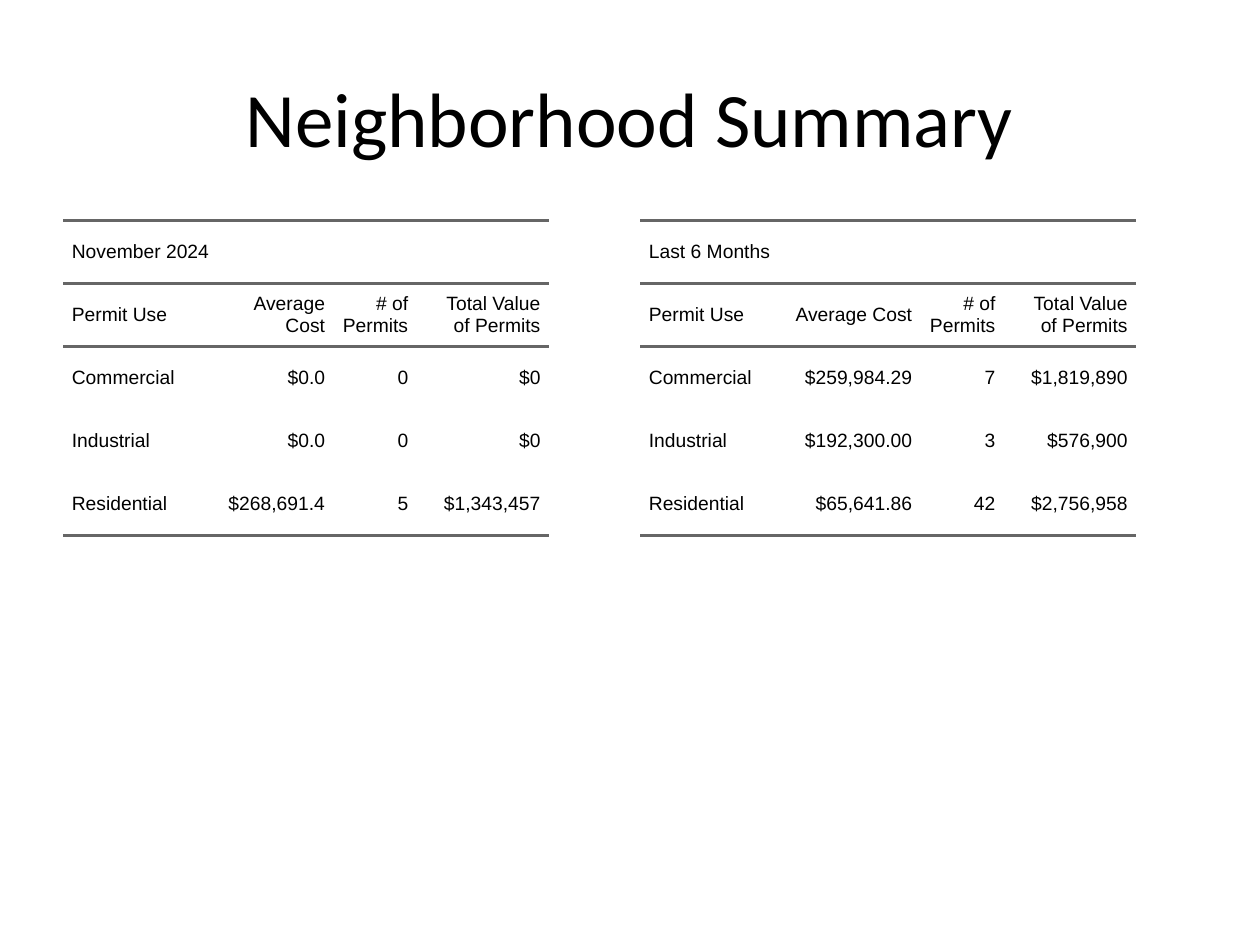
"""Build the neighborhood summary slide with two permit tables."""
import pptx
import pptx.dml.color
import pptx.enum.text
import pptx.oxml
import pptx.oxml.ns
import pptx.util
from pptx.util import Inches

TITLE = "Neighborhood Summary"
HEADINGS = ("Permit Use", "Average Cost", "# of Permits", "Total Value of Permits")
TABLES = [
    {
        "period": "November 2024",
        "left": 0.5,
        "widths": (1.1, 1.05, 0.66, 1.05),
        "permits": [
            ("Commercial", "$0.0", "0", "$0"),
            ("Industrial", "$0.0", "0", "$0"),
            ("Residential", "$268,691.4", "5", "$1,343,457"),
        ],
    },
    {
        "period": "Last 6 Months",
        "left": 5.08,
        "widths": (1.1, 1.13, 0.66, 1.05),
        "permits": [
            ("Commercial", "$259,984.29", "7", "$1,819,890"),
            ("Industrial", "$192,300.00", "3", "$576,900"),
            ("Residential", "$65,641.86", "42", "$2,756,958"),
        ],
    },
]
TABLE_TOP, ROW_HEIGHT, PADDING = 1.75, 0.5, 0.07
INK, RULE = "000000", "666666"
RULE_WIDTH = 1.5
ALIGN = pptx.enum.text.PP_ALIGN
MIDDLE = pptx.enum.text.MSO_ANCHOR.MIDDLE


def color(value):
    return pptx.dml.color.RGBColor.from_string(value)


def style_text(paragraph, font, size, align):
    paragraph.alignment = align
    paragraph.font.name = font
    paragraph.font.size = pptx.util.Pt(size)
    paragraph.font.color.rgb = color(INK)


def set_borders(cell, ruled):
    properties = cell._tc.get_or_add_tcPr()
    for index, side in enumerate(("L", "R", "T", "B")):
        if side in ruled:
            paint = f'<a:solidFill><a:srgbClr val="{RULE}"/></a:solidFill>'
        else:
            paint = "<a:noFill/>"
        line = pptx.oxml.parse_xml(
            f'<a:ln{side} {pptx.oxml.ns.nsdecls("a")} '
            f'w="{pptx.util.Pt(RULE_WIDTH)}">{paint}</a:ln{side}>'
        )
        properties.insert(index, line)


def add_title(page):
    box = page.shapes.add_textbox(Inches(0.5), Inches(0.3), Inches(9), Inches(1.25))
    frame = box.text_frame
    frame.word_wrap = True
    frame.vertical_anchor = MIDDLE
    frame.text = TITLE
    style_text(frame.paragraphs[0], "Calibri", 44, ALIGN.CENTER)


def add_permit_table(page, period, left, widths, permits):
    rows = [(period, "", "", ""), HEADINGS, *permits]
    table = page.shapes.add_table(
        len(rows), len(widths), Inches(left), Inches(TABLE_TOP),
        Inches(sum(widths)), Inches(ROW_HEIGHT * len(rows)),
    ).table
    table.first_row = table.horz_banding = False
    for column, width in zip(table.columns, widths):
        column.width = Inches(width)
    for row_index, values in enumerate(rows):
        table.rows[row_index].height = Inches(ROW_HEIGHT)
        ruled = "TB" if row_index < 2 else "B" if row_index == len(rows) - 1 else ""
        if row_index == 2:
            ruled += "T"
        for column_index, value in enumerate(values):
            cell = table.cell(row_index, column_index)
            cell.text = value
            cell.fill.background()
            cell.vertical_anchor = MIDDLE
            cell.margin_left = cell.margin_right = Inches(PADDING)
            cell.margin_top = cell.margin_bottom = Inches(PADDING)
            align = ALIGN.RIGHT if column_index else ALIGN.LEFT
            style_text(cell.text_frame.paragraphs[0], "Arial", 11, align)
            set_borders(cell, ruled)
    table.cell(0, 0).merge(table.cell(0, len(widths) - 1))


def main():
    deck = pptx.Presentation()
    deck.slide_width, deck.slide_height = Inches(10), Inches(7.5)
    page = deck.slides.add_slide(deck.slide_layouts[6])
    for table in TABLES:
        add_permit_table(page, **table)
    add_title(page)
    deck.save("out.pptx")


if __name__ == "__main__":
    main()
